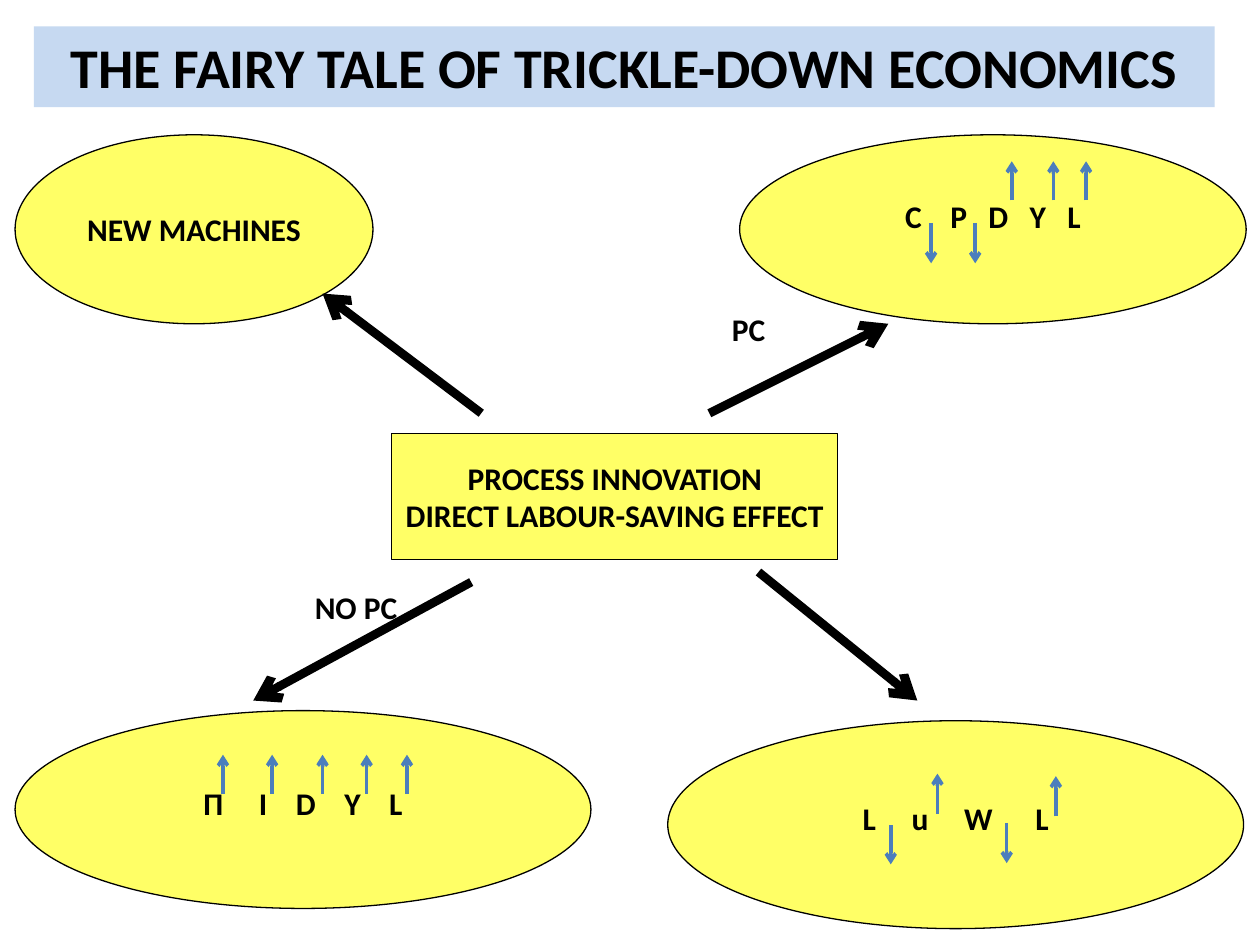
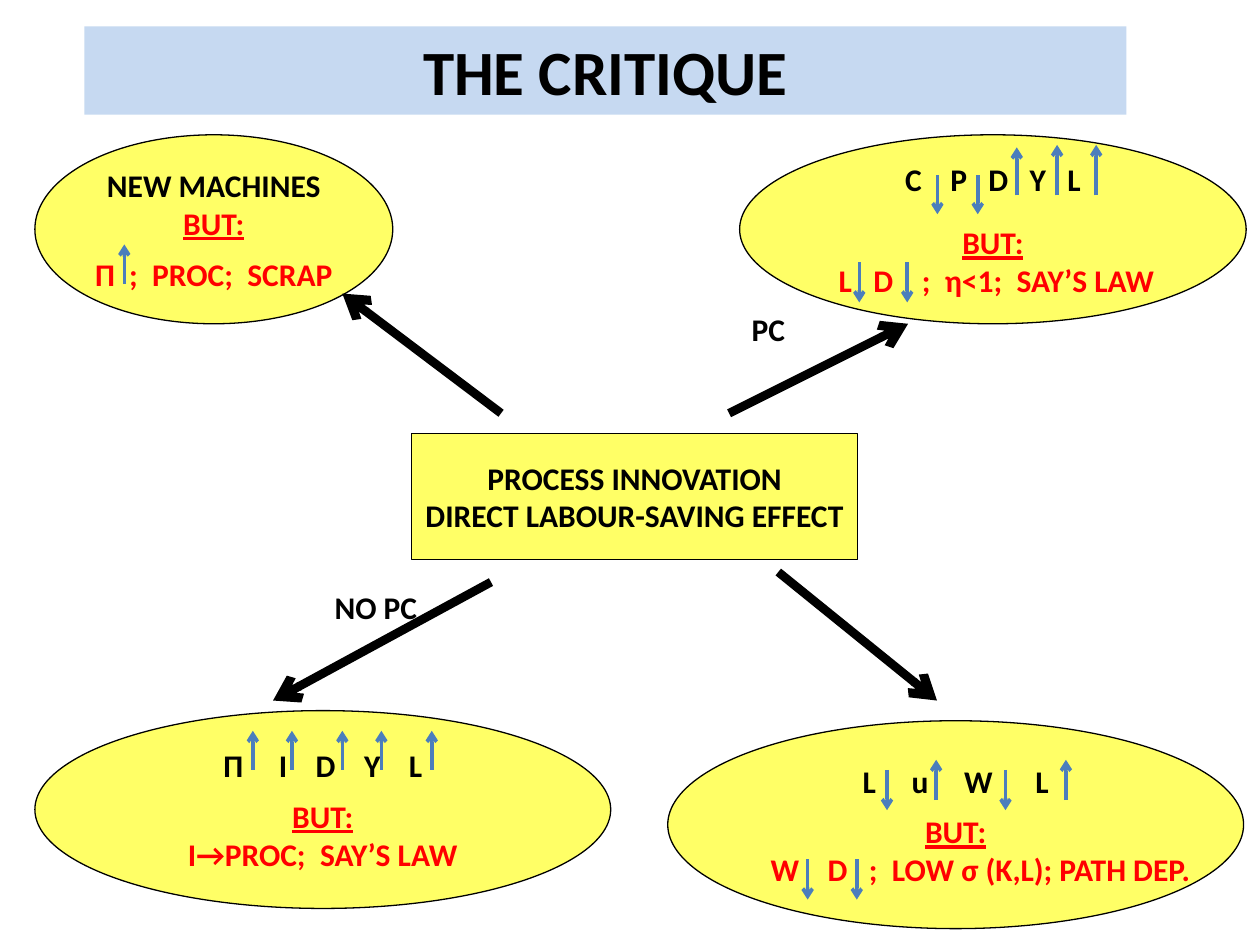
from dataclasses import dataclass

from lxml.etree import SubElement
from pptx import Presentation
from pptx.dml.color import RGBColor
from pptx.enum.shapes import MSO_CONNECTOR, MSO_SHAPE
from pptx.enum.text import MSO_ANCHOR, PP_ALIGN
from pptx.oxml.ns import qn
from pptx.util import Inches, Pt

COLOURS = {"ink": "000000", "alert": "FF0000", "node": "FFFF66",
           "band": "C6D9F1", "trend": "4B7EBC"}
FONT = "Calibri"
TEXT_SIZE = 18
SPACE_WIDTH = 4.07
CELL = 0.1
COLUMNS, ROWS = 100, 75
CRITIQUE_SHIFT = 1.57


@dataclass
class Box:
    """A rectangle measured in grid columns and rows."""
    left: float
    top: float
    width: float
    height: float

    def moved(self, columns):
        """Return the same box further to the right."""
        return Box(self.left + columns, self.top, self.width, self.height)

    def lengths(self):
        """Return left, top, width and height as slide lengths."""
        return [grid(n) for n in (self.left, self.top, self.width, self.height)]


@dataclass
class Line:
    """A line of text: strings are words, integers are gaps in space widths."""
    words: tuple
    before: float = 0
    colour: str = "ink"
    underline: bool = False


@dataclass
class Trend:
    """A row of equal small arrows: start row, signed length and columns."""
    start: float
    length: float
    columns: tuple


NODES = {
    "machines": Box(1.2, 10.7, 28.4, 15),
    "prices": Box(58.7, 10.7, 40.2, 15),
    "profits": Box(1.2, 56.4, 45.7, 15.7),
    "wages": Box(53, 57.2, 45.7, 16.5),
}
HEADS = {
    "machines": ("NEW MACHINES",),
    "prices": ("C", 4, "P", 3, "D", 3, "Y", 3, "L"),
    "profits": ("Π", 5, "I", 4, "D", 4, "Y", 4, "L"),
    "wages": ("L", 5, "u", 5, "W", 6, "L"),
}
HEAD_SPACE = {"machines": 0, "prices": 14.65, "profits": 7.32, "wages": 7.32}
OBJECTIONS = {
    "machines": ("Π", 2, ";", 2, "PROC;", 2, "SCRAP"),
    "prices": (1, "L", 3, "D", 4, ";", 2, "η<1;", 2, "SAY’S LAW"),
    "profits": ("I→PROC;", 2, "SAY’S LAW"),
    "wages": (7, "W", 4, "D", 3, ";", 2, "LOW σ (K,L); PATH DEP."),
}
TALE_TRENDS = {
    "machines": [],
    "prices": [Trend(7, 3.2, (15.2, 18.7)), Trend(5.2, -3.1, (21.6, 24.9, 27.5))],
    "profits": [Trend(6.6, -3.1, (16.5, 20.4, 24.4, 27.9, 31.1))],
    "wages": [Trend(8.3, 3.1, (17.7,)), Trend(8.1, 3.2, (26.9,)),
              Trend(7.4, -3.2, (21.4,)), Trend(7.6, -3.2, (30.8,))],
}
CRITIQUE_TRENDS = {
    "machines": [Trend(11.8, -3.1, (7.1,))],
    "prices": [Trend(3.2, 3.1, (15.7, 18.9)), Trend(10.1, 3.2, (9.5, 13.3)),
               Trend(4.8, -3.8, (22,)), Trend(4.8, -4, (25.2, 28.3))],
    "profits": [Trend(4.7, -3.1, (17.3, 20.4, 24.4, 27.5, 31.5))],
    "wages": [Trend(3.9, 3.2, (17.4, 26.8)), Trend(6.3, -3.2, (21.3, 31.6)),
              Trend(11, 3.2, (11.1, 15))],
}
CORE = Box(31.1, 34.4, 35.4, 10)
SPOKES = [((7.1, -1.6), (-5.5, -11.1)), ((29.1, 11), (41.7, 21.2)),
          ((25.2, -1.6), (39.4, -8.7)), ((6.3, 11.8), (-11, 21.2))]
LABELS = [("PC", Box(26, -10.3, 6, 4), True), ("NO PC", Box(-7.1, 11.8, 8.6, 4), False)]


def grid(cells):
    """Turn grid cells into a slide length."""
    return Inches(cells * CELL)


def colour(name):
    """Look up a named colour."""
    return RGBColor.from_string(COLOURS[name])


def add_line(frame, line, first, size=TEXT_SIZE, align=PP_ALIGN.CENTER):
    """Write one bold line of text with its measured gaps."""
    para = frame.paragraphs[0] if first else frame.add_paragraph()
    para.alignment = align
    para.space_before = Pt(line.before)
    font = para.font
    font.name, font.size, font.bold = FONT, Pt(size), True
    font.underline = line.underline
    font.color.rgb = colour(line.colour)
    for index, word in enumerate(line.words):
        if isinstance(word, str):
            para.add_run().text = word
        elif index == 0:
            indent = Pt(word * SPACE_WIDTH)
            para._p.get_or_add_pPr().set("marL", str(indent))
        else:
            span = para.add_run()
            span.text = " "
            spacing = round((word - 1) * SPACE_WIDTH * 100)
            span._r.get_or_add_rPr().set("spc", str(spacing))


def add_block(page, kind, box, lines, fill, outlined=True, size=TEXT_SIZE):
    """Draw a filled shape with centred lines of text and return it."""
    block = page.shapes.add_shape(kind, *box.lengths())
    block.shadow.inherit = False
    block.fill.solid()
    block.fill.fore_color.rgb = colour(fill)
    if outlined:
        block.line.color.rgb = colour("ink")
        block.line.width = Pt(0.75)
    else:
        block.line.fill.background()
    frame = block.text_frame
    frame.word_wrap = False
    frame.vertical_anchor = MSO_ANCHOR.MIDDLE
    for index, line in enumerate(lines):
        add_line(frame, line, index == 0, size)
    return block


def add_arrow(page, start, end, shade, width):
    """Draw a straight arrow between two grid points."""
    points = [grid(n) for n in (*start, *end)]
    arrow = page.shapes.add_connector(MSO_CONNECTOR.STRAIGHT, *points)
    arrow.line.color.rgb = colour(shade)
    arrow.line.width = Pt(width)
    properties = arrow._element.spPr
    SubElement(properties.find(qn("a:ln")), qn("a:tailEnd"), type="arrow")
    SubElement(properties, qn("a:effectLst"))


def add_title(page, box, text, size):
    """Draw the title band."""
    band = add_block(page, MSO_SHAPE.RECTANGLE, box, [Line((text,))], "band", False, size)
    band.text_frame.word_wrap = True
    band.text_frame.vertical_anchor = MSO_ANCHOR.TOP


def add_node(page, box, name, critical):
    """Draw one outcome ellipse, with its objection on the critical slide."""
    space = HEAD_SPACE[name]
    lines = [Line(HEADS[name])]
    if critical:
        gap = 7.32 if name == "machines" else 0
        lines += [Line(("BUT:",), space, "alert", True),
                  Line(OBJECTIONS[name], gap, "alert")]
    node = add_block(page, MSO_SHAPE.OVAL, box, lines, "node")
    if not critical:
        node.text_frame.margin_bottom = Inches(0.05) + Pt(space)


def add_trends(page, box, trends):
    """Draw the small rise and fall arrows of one ellipse."""
    for trend in trends:
        top = box.top + trend.start
        for column in trend.columns:
            left = box.left + column
            add_arrow(page, (left, top), (left, top + trend.length), "trend", 2)


def add_core(page, box):
    """Draw the central box, its spokes and their labels."""
    lines = [Line((text,)) for text in ("PROCESS INNOVATION", "DIRECT LABOUR-SAVING EFFECT")]
    add_block(page, MSO_SHAPE.RECTANGLE, box, lines, "node")
    for spoke in SPOKES:
        start, end = [(box.left + x, box.top + y) for x, y in spoke]
        add_arrow(page, start, end, "ink", 5)
    for text, place, wraps in LABELS:
        spot = Box(box.left + place.left, box.top + place.top, place.width, place.height)
        label = page.shapes.add_textbox(*spot.lengths())
        label.text_frame.word_wrap = wraps
        add_line(label.text_frame, Line((text,)), True, align=PP_ALIGN.LEFT)


def add_diagram(deck, title, band, size, trends, critical=False):
    """Add a slide with a title band, a core and four outcomes."""
    page = deck.slides.add_slide(deck.slide_layouts[6])
    shift = CRITIQUE_SHIFT if critical else 0
    boxes = {name: box.moved(shift if box.left < COLUMNS / 2 else 0)
             for name, box in NODES.items()}
    for name, box in boxes.items():
        add_node(page, box, name, critical)
    add_title(page, band, title, size)
    add_core(page, CORE.moved(shift))
    for name, box in boxes.items():
        add_trends(page, box, trends[name])


def main():
    """Build and save the deck."""
    deck = Presentation()
    deck.slide_width, deck.slide_height = grid(COLUMNS), grid(ROWS)
    add_diagram(deck, "THE FAIRY TALE OF TRICKLE-DOWN ECONOMICS",
                Box(2.7, 2.1, 93.7, 6.4), 32, TALE_TRENDS)
    add_diagram(deck, "THE CRITIQUE", Box(6.7, 2.1, 82.7, 7), 36, CRITIQUE_TRENDS, True)
    deck.save("out.pptx")


if __name__ == "__main__":
    main()
